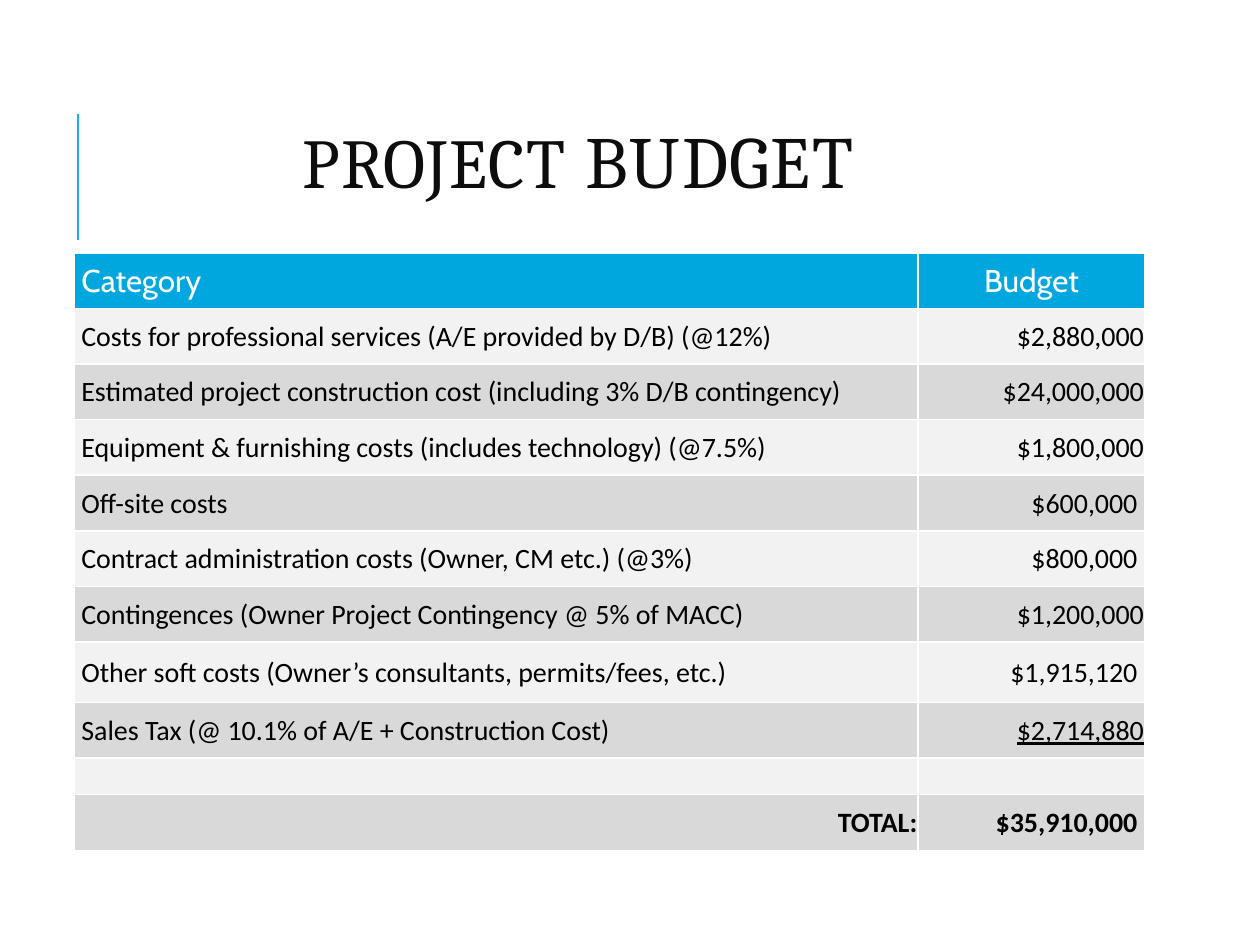
from dataclasses import dataclass

from lxml.etree import SubElement
from pptx import Presentation
from pptx.dml.color import RGBColor
from pptx.enum.shapes import MSO_CONNECTOR
from pptx.enum.text import MSO_ANCHOR, MSO_AUTO_SIZE, PP_ALIGN
from pptx.oxml import parse_xml
from pptx.oxml.ns import nsdecls, qn
from pptx.util import Cm, Pt

TITLE = [("PROJECT", 40), (" BUDGET", 42)]
HEADER = ("Category", "Budget")
COSTS = [
    ("Costs for professional services (A/E provided by D/B) (@12%)", "$2,880,000"),
    ("Estimated project construction cost (including 3% D/B contingency)", "$24,000,000"),
    ("Equipment & furnishing costs (includes technology) (@7.5%)", "$1,800,000"),
    ("Off-site costs", "$600,000"),
    ("Contract administration costs (Owner, CM etc.) (@3%)", "$800,000"),
    ("Contingences (Owner Project Contingency @ 5% of MACC)", "$1,200,000"),
    ("Other soft costs (Owner’s consultants, permits/fees, etc.)", "$1,915,120"),
    ("Sales Tax (@ 10.1% of A/E + Construction Cost)", "$2,714,880"),
]
TOTAL = ("TOTAL:", "$35,910,000")
ROWS = [HEADER, *COSTS, ("", ""), TOTAL]
INDENTED_AMOUNTS = {"$600,000", "$800,000", "$1,915,120", "$35,910,000"}
UNDERLINED = "$2,714,880"

COLUMN_WIDTHS = (17.02, 4.57)
ROW_HEIGHT = 1.12
SPECIAL_HEIGHTS = {7: 1.22, 9: 0.74}


@dataclass(frozen=True)
class Theme:
    title_font: str = "Cambria"
    header_font: str = "Cabin"
    body_font: str = "Calibri"
    header_size: int = 18
    body_size: int = 16
    title_color: str = "0D0D0D"
    header_color: str = "FFFFFF"
    body_color: str = "000000"
    rule: str = "1CADE4"
    header_fill: str = "00A6DE"
    bands: tuple = ("F2F2F2", "D9D9D9")
    border: str = "FFFFFF"
    inset: float = 0.02
    indent: float = 0.15


THEME = Theme()


def color(value):
    return RGBColor.from_string(value)


def set_font(font, name, size, value):
    font.name = name
    font.size = Pt(size)
    font.color.rgb = color(value)


def add_rule(page):
    rule = page.shapes.add_connector(
        MSO_CONNECTOR.STRAIGHT, Cm(1.57), Cm(4.83), Cm(1.57), Cm(2.29))
    rule.line.color.rgb = color(THEME.rule)
    rule.line.width = Pt(1.5)
    SubElement(rule._element.spPr, qn("a:effectLst"))


def fill_title(box):
    box.left, box.top, box.width, box.height = Cm(1.07), Cm(2.11), Cm(21.16), Cm(2.54)
    frame = box.text_frame
    frame.word_wrap = True
    frame.auto_size = MSO_AUTO_SIZE.NONE
    frame.vertical_anchor = MSO_ANCHOR.MIDDLE
    para = frame.paragraphs[0]
    para.alignment = PP_ALIGN.CENTER
    para.line_spacing = 0.8
    for text, size in TITLE:
        span = para.add_run()
        span.text = text
        set_font(span.font, THEME.title_font, size, THEME.title_color)
        span._r.get_or_add_rPr().set("spc", "100")


def add_borders(cell):
    properties = cell._tc.get_or_add_tcPr()
    for position, side in enumerate(("lnL", "lnR", "lnT", "lnB")):
        properties.insert(position, parse_xml(
            f'<a:{side} {nsdecls("a")} w="{Pt(1)}"><a:solidFill>'
            f'<a:srgbClr val="{THEME.border}"/></a:solidFill></a:{side}>'))


def alignment_for(row, column):
    if row == 0:
        return PP_ALIGN.CENTER if column else PP_ALIGN.LEFT
    is_total = row == len(ROWS) - 1
    return PP_ALIGN.RIGHT if column or is_total else PP_ALIGN.LEFT


def fill_cell(cell, text, row, column):
    is_header = row == 0
    alignment = alignment_for(row, column)
    cell.vertical_anchor = MSO_ANCHOR.MIDDLE
    cell.margin_left = Cm(THEME.indent if alignment == PP_ALIGN.LEFT else THEME.inset)
    cell.margin_right = Cm(THEME.indent if text in INDENTED_AMOUNTS else THEME.inset)
    cell.margin_top = Cm(THEME.inset)
    cell.margin_bottom = 0
    cell.fill.solid()
    cell.fill.fore_color.rgb = color(
        THEME.header_fill if is_header else THEME.bands[(row - 1) % 2])
    add_borders(cell)

    para = cell.text_frame.paragraphs[0]
    if not text:
        SubElement(para._p, qn("a:endParaRPr"), sz="1200")
        return
    para.text = text
    para.alignment = alignment
    if is_header:
        set_font(para.font, THEME.header_font, THEME.header_size, THEME.header_color)
    else:
        set_font(para.font, THEME.body_font, THEME.body_size, THEME.body_color)
    para.font.bold = text in TOTAL
    para.font.underline = text == UNDERLINED


def add_budget(page):
    heights = [SPECIAL_HEIGHTS.get(row, ROW_HEIGHT) for row in range(len(ROWS))]
    table = page.shapes.add_table(
        len(ROWS), len(HEADER), Cm(1.49), Cm(5.1),
        Cm(sum(COLUMN_WIDTHS)), Cm(sum(heights))).table
    table.first_row = False
    table.horz_banding = False
    for column, width in zip(table.columns, COLUMN_WIDTHS):
        column.width = Cm(width)
    for row, (height, texts) in enumerate(zip(heights, ROWS)):
        table.rows[row].height = Cm(height)
        for column, text in enumerate(texts):
            fill_cell(table.cell(row, column), text, row, column)


def main():
    deck = Presentation()
    deck.slide_width, deck.slide_height = Cm(25.4), Cm(19.05)
    page = deck.slides.add_slide(deck.slide_layouts[5])
    add_rule(page)
    fill_title(page.shapes.title)
    add_budget(page)
    deck.save("out.pptx")


if __name__ == "__main__":
    main()
